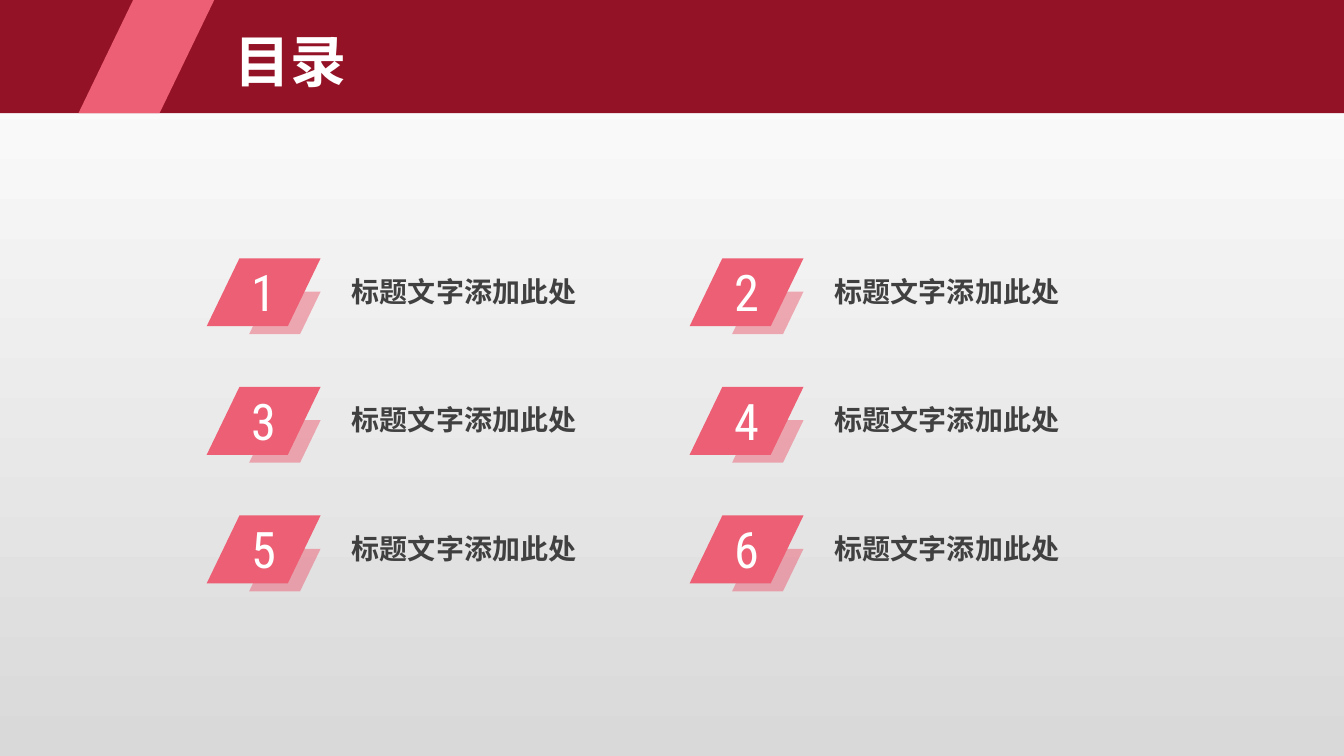
from itertools import product

from pptx import Presentation
from pptx.dml.color import RGBColor
from pptx.enum import text as t
from pptx.oxml import parse_xml
from pptx.oxml.ns import nsdecls
from pptx.util import Cm, Pt

WIDE, HIGH = 33.87, 19.05
SLANT = 0.483
PINK, RED, WHITE, GREY = "EC5F74", "941225", "FFFFFF", "404040"
SANS, THIN = "Noto Sans CJK SC", "Roboto Condensed"


def paint(color, code):
    color.rgb = RGBColor.from_string(code)


def finish(shape, code, alpha=None):
    """Fill a shape flat, without line or shadow; alpha is in percent."""
    shape.shadow.inherit = False
    shape.line.fill.background()
    shape.fill.solid()
    paint(shape.fill.fore_color, code)
    if alpha:
        clear = parse_xml(f'<a:alpha {nsdecls("a")} val="{alpha * 1000}"/>')
        shape.element.xpath(".//a:srgbClr")[0].append(clear)


def lean(shapes, x, y, w, h, code, alpha=None):
    """Draw a bar that leans right, every one at the same slant."""
    shift = h * SLANT
    pts = [(x + shift, y), (x + w, y), (x + w - shift, y + h), (x, y + h)]
    pts = [(Cm(px), Cm(py)) for px, py in pts]
    pen = shapes.build_freeform(*pts[0], scale=1.0)
    pen.add_line_segments(pts[1:], close=True)
    finish(pen.convert_to_shape(), code, alpha)


def write(box, words, size, face, code, bold=False, align=t.PP_ALIGN.LEFT):
    frame = box.text_frame
    frame.text = words
    frame.word_wrap = False
    frame.auto_size = t.MSO_AUTO_SIZE.SHAPE_TO_FIT_TEXT
    frame.vertical_anchor = t.MSO_ANCHOR.TOP
    para = frame.paragraphs[0]
    para.alignment = align
    font = para.runs[0].font
    font.size, font.bold, font.name = Pt(size), bold, face
    paint(font.color, code)
    east = parse_xml(f'<a:ea {nsdecls("a")} typeface="{face}"/>')
    box.element.xpath(".//a:rPr")[0].append(east)


def place(box, x, y, w, h):
    box.left, box.top, box.width, box.height = Cm(x), Cm(y), Cm(w), Cm(h)


def backdrop(slide):
    fill = slide.background.fill
    fill.gradient()
    fill.gradient_angle = 270
    for stop, code in zip(fill.gradient_stops, (WHITE, "D9D9D9")):
        paint(stop.color, code)


def header(slide, x, y, w, h):
    band = slide.shapes.add_shape(1, Cm(x), Cm(y), Cm(w), Cm(h))
    finish(band, RED)
    lean(slide.shapes, x + 1.98, y, 3.42, h, PINK)
    title = slide.shapes.title
    place(title, x + 5.66, y + 0.54, 3.33, 1.96)
    write(title, "目录", 40, THIN, WHITE, bold=True)
    # The title must lie above the band
    title.element.getparent().append(title.element)


def entry(slide, x, y, num):
    w, h = 2.87, 1.71
    parts = slide.shapes.add_group_shape().shapes
    lean(parts, x, y, w, h, PINK)
    lean(parts, x + 1.07, y + 0.84, w - 1.07, 1.07, PINK, alpha=50)
    label = parts.add_textbox(Cm(x + 3.41), Cm(y + 0.28), Cm(6.22), Cm(1.12))
    write(label, "标题文字添加此处", 20, SANS, GREY, bold=True)
    digit = parts.add_textbox(Cm(x + w / 2 - 0.6), Cm(y - 0.05), Cm(1.2), Cm(1.8))
    write(digit, str(num), 36, THIN, WHITE, align=t.PP_ALIGN.CENTER)


def contents(slide, x, y):
    for col, row in product(range(2), range(3)):
        entry(slide, x + col * 12.17, y + row * 3.24, row * 2 + col + 1)


def main():
    deck = Presentation()
    deck.slide_width, deck.slide_height = Cm(WIDE), Cm(HIGH)
    slide = deck.slides.add_slide(deck.slide_layouts.get_by_name("Title Only"))
    backdrop(slide)
    header(slide, 0, 0, WIDE, 2.85)
    contents(slide, 5.21, 6.51)
    deck.save("out.pptx")


if __name__ == "__main__":
    main()
